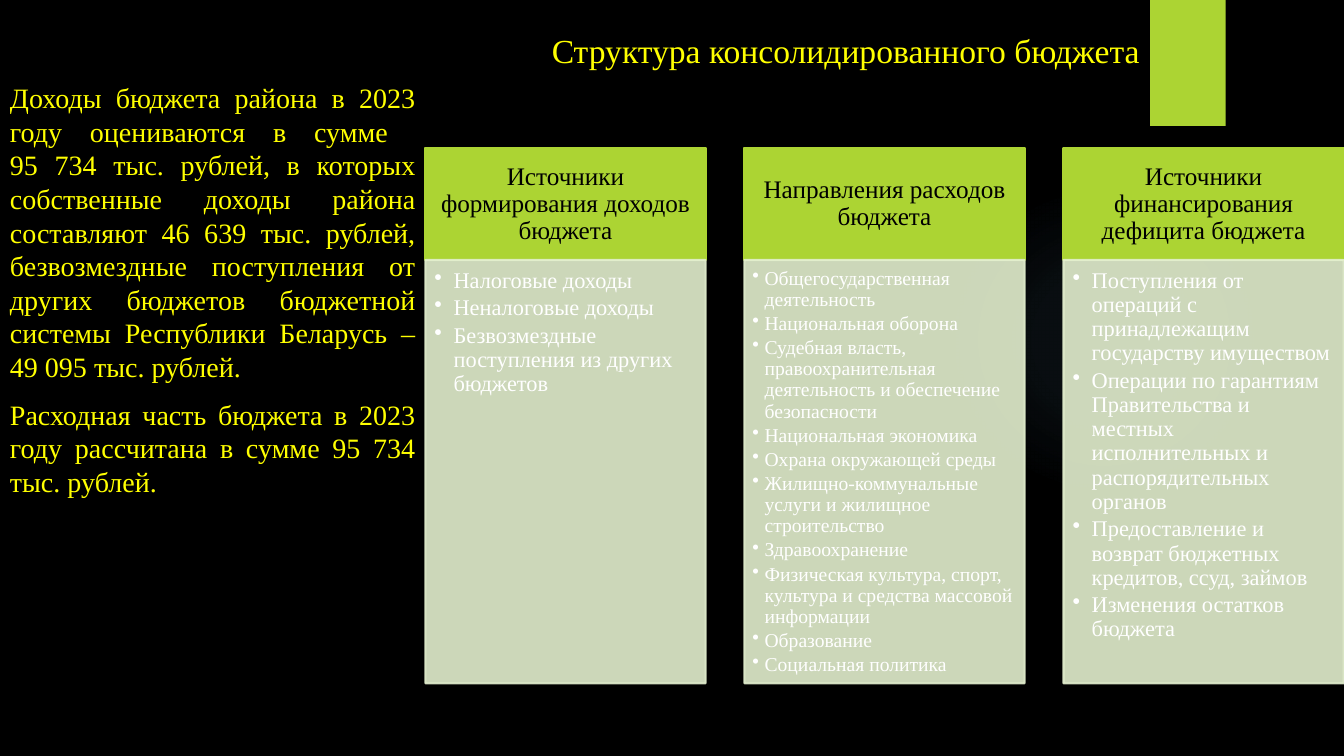
from lxml import etree
from pptx import Presentation
from pptx.dml.color import RGBColor
from pptx.enum.shapes import MSO_SHAPE
from pptx.enum.text import MSO_ANCHOR, MSO_AUTO_SIZE, PP_ALIGN
from pptx.oxml import parse_xml
from pptx.oxml.ns import nsdecls, qn
from pptx.util import Inches, Pt

RECT, OVAL = MSO_SHAPE.RECTANGLE, MSO_SHAPE.OVAL
TOP, MIDDLE = MSO_ANCHOR.TOP, MSO_ANCHOR.MIDDLE
LEFT, CENTER, FULL = PP_ALIGN.LEFT, PP_ALIGN.CENTER, PP_ALIGN.JUSTIFY
BLACK = RGBColor(0x00, 0x00, 0x00)
WHITE = RGBColor(0xFF, 0xFF, 0xFF)
YELLOW = RGBColor(0xFF, 0xFF, 0x00)
LIME = RGBColor(0xAC, 0xD4, 0x33)
PALE = RGBColor(0xE3, 0xEF, 0xCE)
FONT = "Times New Roman"

# Column grid, in inches
COL_X, COL_W, STEP = 4.22, 2.78, 3.165
HEAD_Y, HEAD_H, LIST_H = 1.47, 1.11, 4.2

INTRO = [
    ["Доходы бюджета района в 2023 году оцениваются в сумме ",
     "95 734 тыс. рублей, в которых собственные доходы района составляют "
     "46 639 тыс. рублей, безвозмездные поступления от других бюджетов "
     "бюджетной системы Республики Беларусь – 49 095 тыс. рублей."],
    ["Расходная часть бюджета в 2023 году рассчитана в сумме 95 734 тыс. рублей."],
]

# Heading, text size, bullet indent, insets, items
WIDE, TIGHT = (0.09, 0.09, 0.12, 0.14), (0.08, 0.08, 0.11, 0.12)
COLUMNS = [
    ("Источники формирования доходов бюджета", 16, 0.19, WIDE, [
        "Налоговые доходы",
        "Неналоговые доходы",
        "Безвозмездные поступления из других бюджетов"]),
    ("Направления расходов бюджета", 14, 0.12, TIGHT, [
        "Общегосударственная деятельность",
        "Национальная оборона",
        "Судебная власть, правоохранительная деятельность и обеспечение безопасности",
        "Национальная экономика",
        "Охрана окружающей среды",
        "Жилищно-коммунальные услуги и жилищное строительство",
        "Здравоохранение",
        "Физическая культура, спорт, культура и средства массовой информации",
        "Образование",
        "Социальная политика"]),
    ("Источники финансирования дефицита бюджета", 16, 0.19, WIDE, [
        "Поступления от операций с принадлежащим государству имуществом",
        "Операции по гарантиям Правительства и местных исполнительных "
        "и распорядительных органов",
        "Предоставление и возврат бюджетных кредитов, ссуд, займов",
        "Изменения остатков бюджета"]),
]


def add_box(kind, x, y, w, h, fill, edge=False):
    box = slide.shapes.add_shape(kind, Inches(x), Inches(y), Inches(w), Inches(h))
    box.shadow.inherit = False
    box.fill.solid()
    box.fill.fore_color.rgb = fill
    if edge:
        box.line.color.rgb = fill
        box.line.width = Pt(1.5)
    else:
        box.line.fill.background()
    return box


def add_run(para, text, size, color):
    run = para.add_run()
    run.text = text
    run.font.name = FONT
    run.font.size = Pt(size)
    run.font.color.rgb = color


prs = Presentation()
prs.slide_width, prs.slide_height = Inches(13.333), Inches(7.5)
slide = prs.slides.add_slide(prs.slide_layouts[5])
slide.background.fill.solid()
slide.background.fill.fore_color.rgb = BLACK

# Soft glow
glow = add_box(OVAL, 9.41, 1.83, 3.08, 3.08, BLACK)
stops = "".join(
    f'<a:gs pos="{pos}000"><a:srgbClr val="7AC4F0"><a:alpha val="{alpha}000"/>'
    "</a:srgbClr></a:gs>" for pos, alpha in ((0, 7), (36, 6), (69, 0), (100, 0)))
props = glow.element.spPr
props.replace(props.find(qn("a:solidFill")), parse_xml(
    f'<a:gradFill {nsdecls("a")}><a:gsLst>{stops}</a:gsLst><a:path path="circle">'
    '<a:fillToRect l="50000" t="50000" r="50000" b="50000"/></a:path></a:gradFill>'))

# Corner tab
add_box(RECT, 11.41, 0, 0.75, 1.25, LIME)

# Title
title = slide.shapes.title
title.left, title.top = Inches(5.34), Inches(0.25)
title.width, title.height = Inches(6.1), Inches(0.5)
frame = title.text_frame
frame.word_wrap = True
frame.auto_size = MSO_AUTO_SIZE.NONE
frame.vertical_anchor = TOP
frame.paragraphs[0].alignment = CENTER
add_run(frame.paragraphs[0], "Структура консолидированного бюджета", 24, YELLOW)

# Intro text
intro = slide.shapes.add_textbox(0, Inches(0.75), Inches(COL_X), Inches(6.75))
frame = intro.text_frame
frame.word_wrap = True
for i, lines in enumerate(INTRO):
    para = frame.add_paragraph() if i else frame.paragraphs[0]
    para.alignment = FULL
    if i:
        para.space_before = Pt(10)
    for j, line in enumerate(lines):
        if j:
            para.add_line_break()
        add_run(para, line, 20, YELLOW)

# Budget columns
for col, (name, size, indent, pads, items) in enumerate(COLUMNS):
    x = COL_X + col * STEP
    head = add_box(RECT, x, HEAD_Y, COL_W, HEAD_H, LIME, True)
    panel = add_box(RECT, x, HEAD_Y + HEAD_H, COL_W, LIST_H, PALE, True)
    for color in panel.element.spPr.iter(qn("a:srgbClr")):
        etree.SubElement(color, qn("a:alpha"), val="90000")

    parts = ((head, MIDDLE, (0.14, 0.08, 0.14, 0.08), [name], 18, BLACK),
             (panel, TOP, pads, items, size, WHITE))
    for box, anchor, inset, texts, points, color in parts:
        frame = box.text_frame
        frame.word_wrap = True
        frame.vertical_anchor = anchor
        (frame.margin_left, frame.margin_top,
         frame.margin_right, frame.margin_bottom) = map(Inches, inset)
        for i, text in enumerate(texts):
            para = frame.add_paragraph() if i else frame.paragraphs[0]
            para.alignment = CENTER if box is head else LEFT
            para.line_spacing = 0.9
            if box is panel:
                para.space_after = Pt(points * 0.15)
                ppr = para._p.get_or_add_pPr()
                ppr.set("marL", str(Inches(indent)))
                ppr.set("indent", str(-Inches(indent)))
                etree.SubElement(ppr, qn("a:buChar"), char="•")
            add_run(para, text, points, color)

prs.save("out.pptx")
